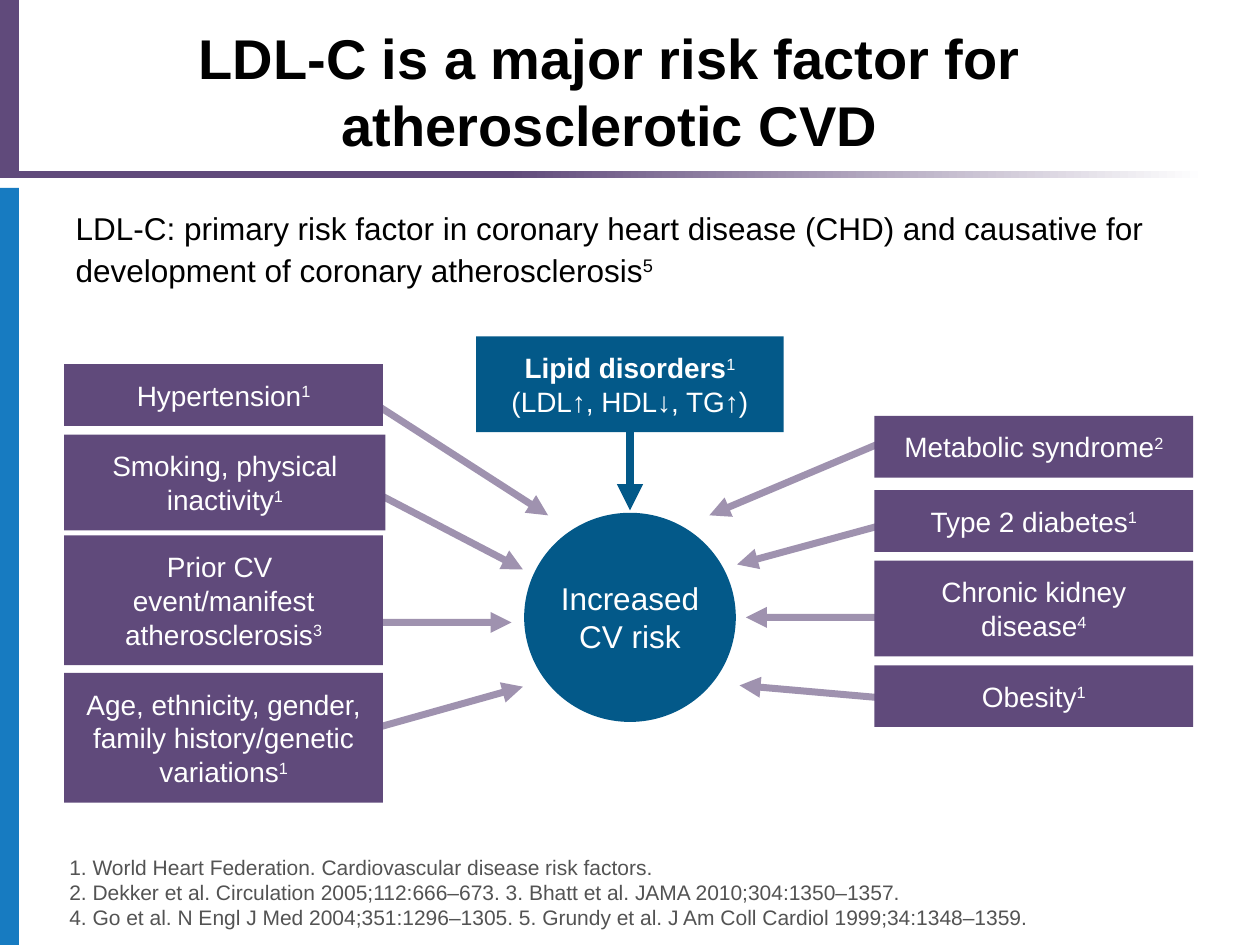
"""Build the slide on the risk factors behind atherosclerotic CVD."""
from dataclasses import dataclass

from lxml.etree import SubElement
from pptx import Presentation
from pptx.dml.color import RGBColor as Rgb
from pptx.enum.shapes import MSO_CONNECTOR as Conn, MSO_SHAPE as Kind
from pptx.enum.text import MSO_ANCHOR as Anchor, MSO_AUTO_SIZE as Fit, PP_ALIGN as Align
from pptx.oxml.ns import qn
from pptx.util import Inches, Pt

HUES = {
    "plum": "604A7B",
    "sky": "177BC1",
    "navy": "035989",
    "white": "FFFFFF",
    "black": "000000",
    "grey": "535353",
}


@dataclass
class Card:
    text: str
    left: float
    top: float
    lines: int
    width: float = 2.53
    hue: str = "plum"
    lead: bool = False


@dataclass
class Arrow:
    start: tuple[float, float]
    end: tuple[float, float]
    hue: str = "plum"
    width: float = 4
    alpha: int = 60


LEFT, RIGHT = 0.51, 6.94
CARDS = [
    Card("Hypertension^1", LEFT, 2.89, 1),
    Card("Smoking, physical inactivity^1", LEFT, 3.45, 2, 2.55),
    Card("Prior CV \vevent/manifest atherosclerosis^3", LEFT, 4.25, 3),
    Card("Age, ethnicity, gender, family history/genetic variations^1", LEFT, 5.34, 3),
    Card("Metabolic syndrome^2", RIGHT, 3.3, 1),
    Card("Type 2 diabetes^1", RIGHT, 3.89, 1),
    Card("Chronic kidney disease^4", RIGHT, 4.45, 2),
    Card("Obesity^1", RIGHT, 5.28, 1),
]
LIPID = Card("Lipid disorders^1\n(LDL↑, HDL↓, TG↑)", 3.78, 2.67, 2, 2.44, "navy", True)
ARROWS = [
    Arrow((2.89, 3.15), (4.35, 4.09)),
    Arrow((2.75, 3.79), (4.15, 4.52)),
    Arrow((2.58, 4.94), (4.06, 4.94)),
    Arrow((2.69, 5.86), (4.15, 5.45)),
    Arrow((7.24, 3.41), (5.63, 4.09)),
    Arrow((7.25, 4.1), (5.85, 4.48)),
    Arrow((7.4, 4.9), (5.92, 4.9)),
    Arrow((7.24, 5.56), (5.87, 5.44)),
]
DROP = Arrow((5, 3.43), (5, 4.05), "navy", 5, 100)
NOTES = (
    "1. World Heart Federation. Cardiovascular disease risk factors.\v"
    "2. Dekker et al. Circulation 2005;112:666–673. 3. Bhatt et al. JAMA 2010;304:1350–1357.\n"
    "4. Go et al. N Engl J Med 2004;351:1296–1305. "
    "5. Grundy et al. J Am Coll Cardiol 1999;34:1348–1359."
)


def tint(name: str) -> Rgb:
    return Rgb.from_string(HUES[name])


def write(frame, text: str, *, size: int, hue: str = "white", lead: bool = False,
          align=Align.CENTER, anchor=Anchor.MIDDLE, pad: tuple = (0.11, 0.11), gap: float = 1):
    """Fill a frame; ^ marks a superscript, \\v a line break, lead a bold first paragraph."""
    frame.word_wrap, frame.auto_size = True, Fit.NONE
    frame.vertical_anchor = anchor
    frame.margin_left = frame.margin_right = Inches(pad[0])
    frame.margin_top = frame.margin_bottom = Inches(pad[1])
    for row, words in enumerate(text.split("\n")):
        para = frame.add_paragraph() if row else frame.paragraphs[0]
        para.alignment, para.line_spacing = align, gap
        para.space_before = Pt(0)
        for turn, line in enumerate(words.split("\v")):
            if turn:
                para.add_line_break()
                SubElement(para._p[-1], qn("a:rPr"), sz=str(size * 100))
            for part, piece in enumerate(line.split("^")):
                run = para.add_run()
                run.text = piece
                font = run.font
                font.name, font.size = "Arial", Pt(size)
                font.color.rgb = tint(hue)
                font.bold = lead and row == 0 and part == 0
                if part:
                    font._element.set("baseline", "30000")


def place(shape, *box: float):
    shape.left, shape.top, shape.width, shape.height = map(Inches, box)
    return shape


def block(slide, kind, hue: str, *box: float):
    shape = slide.shapes.add_shape(kind, *map(Inches, box))
    shape.shadow.inherit = False
    shape.fill.solid()
    shape.fill.fore_color.rgb = tint(hue)
    shape.line.fill.background()
    return shape


def label(slide, *box: float):
    return slide.shapes.add_textbox(*map(Inches, box)).text_frame


def draw_card(slide, card: Card):
    box = block(slide, Kind.RECTANGLE, card.hue,
                card.left, card.top, card.width, 0.22 + 0.27 * card.lines)
    write(box.text_frame, card.text, size=16, lead=card.lead)
    return box


def draw_arrow(slide, arrow: Arrow):
    ends = map(Inches, arrow.start + arrow.end)
    link = slide.shapes.add_connector(Conn.STRAIGHT, *ends)
    link.line.color.rgb = tint(arrow.hue)
    link.line.width = Pt(arrow.width)
    props = link._element.spPr
    line = props.find(qn("a:ln"))
    if arrow.alpha < 100:
        SubElement(line.find(".//" + qn("a:srgbClr")), qn("a:alpha"), val=str(arrow.alpha * 1000))
    SubElement(line, qn("a:tailEnd"), type="triangle")
    SubElement(props, qn("a:effectLst"))
    return link


def draw_frame(slide):
    block(slide, Kind.RECTANGLE, "plum", 0, 0, 0.15, 1.38)
    block(slide, Kind.RECTANGLE, "sky", 0, 1.49, 0.15, 6.01)
    rule = block(slide, Kind.RECTANGLE, "plum", 0, 1.36, 9.57, 0.05)
    rule.fill.gradient()
    rule.fill.gradient_angle = 180
    for stop, (spot, hue) in zip(rule.fill.gradient_stops, [(0, "white"), (0.58, "plum")]):
        stop.position, stop.color.rgb = spot, tint(hue)


def draw_text(slide):
    title = place(slide.shapes.title, 0.18, 0, 9.32, 1.3)
    write(title.text_frame, "LDL-C is a major risk factor for atherosclerotic CVD",
          size=32, hue="black", lead=True, anchor=Anchor.BOTTOM, pad=(0.1, 0.05))
    body = place(slide.placeholders[1], 0.5, 1.58, 9, 0.9).text_frame
    props = body.paragraphs[0]._p.get_or_add_pPr()
    props.set("marL", "0")
    props.set("indent", "0")
    SubElement(props, qn("a:buNone"))
    write(body, "LDL-C: primary risk factor in coronary heart disease (CHD) and causative for "
          "development of coronary atherosclerosis^5", size=18, hue="black",
          align=Align.LEFT, anchor=Anchor.TOP, pad=(0.1, 0.05), gap=1.1)
    write(label(slide, 0.5, 6.72, 8.06, 0.71), NOTES, size=12, hue="grey",
          align=Align.LEFT, anchor=Anchor.BOTTOM, pad=(0.05, 0.05))


def main():
    deck = Presentation()
    deck.slide_width, deck.slide_height = Inches(10), Inches(7.5)
    slide = deck.slides.add_slide(deck.slide_layouts[1])
    draw_frame(slide)
    draw_text(slide)
    for arrow in ARROWS:
        draw_arrow(slide, arrow)
    block(slide, Kind.OVAL, "navy", 4.16, 4.07, 1.68, 1.66)
    write(label(slide, 4.03, 4.36, 1.94, 1.07), "Increased CV risk", size=18, pad=(0.23, 0.23))
    for card in CARDS:
        draw_card(slide, card)
    lipid = draw_card(slide, LIPID)
    draw_arrow(slide, DROP).begin_connect(lipid, 2)
    deck.save("out.pptx")


if __name__ == "__main__":
    main()
